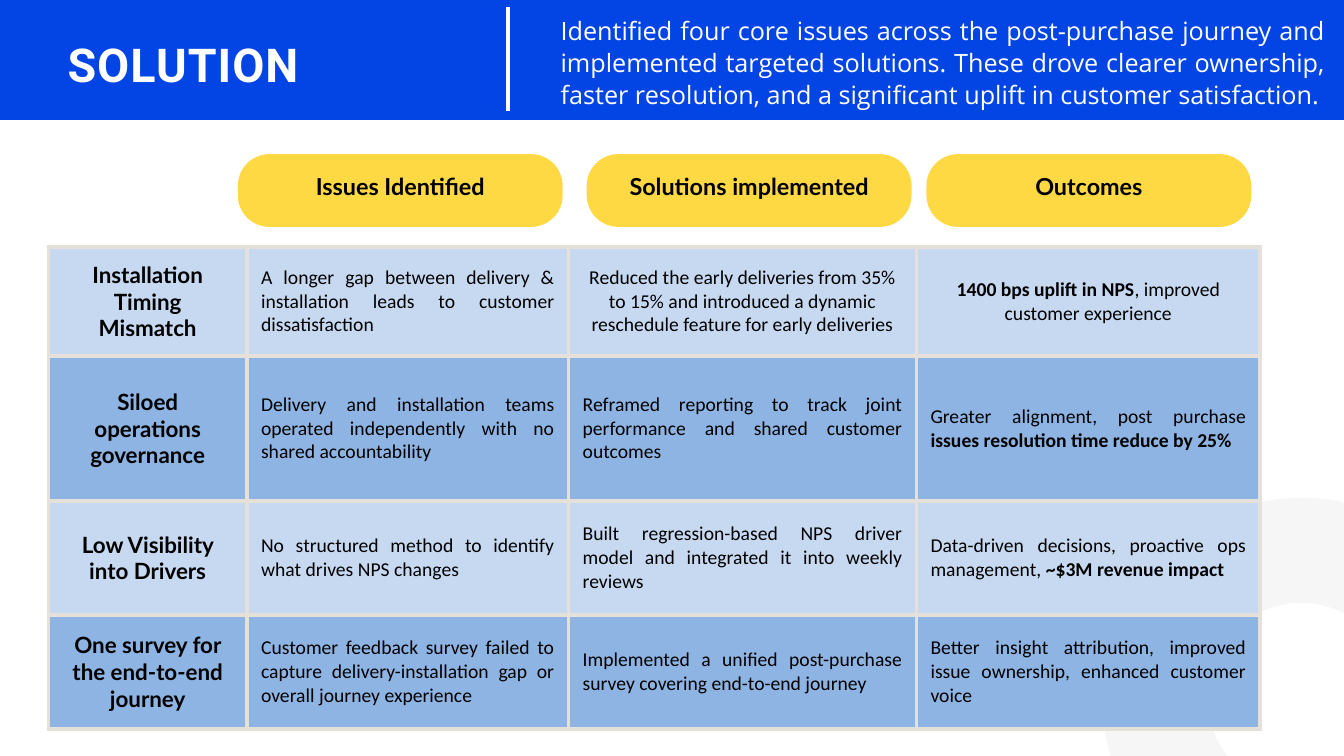
from lxml.etree import SubElement
from pptx import Presentation
from pptx.dml.color import RGBColor
from pptx.enum.shapes import MSO_CONNECTOR, MSO_SHAPE
from pptx.enum.text import MSO_ANCHOR, PP_ALIGN
from pptx.oxml import parse_xml
from pptx.oxml.ns import nsdecls, qn
from pptx.util import Inches, Pt

WHITE = RGBColor(0xFF, 0xFF, 0xFF)
BLACK = RGBColor(0x00, 0x00, 0x00)
BLUE = RGBColor(0x03, 0x45, 0xE4)
YELLOW = RGBColor(0xFF, 0xD9, 0x44)
RING_GREY = RGBColor(0xF6, 0xF6, 0xF6)
BORDER_GREY = RGBColor(0xE5, 0xE1, 0xDA)
ROW_FILLS = [RGBColor(0xC6, 0xD9, 0xF1), RGBColor(0x8E, 0xB4, 0xE3)]

CENTER, JUSTIFY = PP_ALIGN.CENTER, PP_ALIGN.JUSTIFY

SUMMARY = (
    "Identified four core issues across the post-purchase journey and "
    "implemented targeted solutions. These drove clearer ownership, faster "
    "resolution, and a significant uplift in customer satisfaction."
)
HEADINGS = [(2.38, "Issues Identified"), (5.84, "Solutions implemented"), (9.21, "Outcomes")]
COLUMN_WIDTHS = [1.97, 3.19, 3.45, 3.41]
ROW_HEIGHTS = [1.08, 1.44, 1.13, 1.13]

# Each row: heading, issue, solution, outcome as (text, bold) runs
ROWS = [
    ("Installation Timing Mismatch",
     "A longer gap between delivery & installation leads to customer dissatisfaction",
     "Reduced the early deliveries from 35% to 15% and introduced a dynamic "
     "reschedule feature for early deliveries",
     [("1400 bps uplift in NPS", True), (", improved customer experience", False)]),
    ("Siloed operations governance",
     "Delivery and installation teams operated independently with no shared accountability",
     "Reframed reporting to track joint performance and shared customer outcomes",
     [("Greater alignment, post purchase ", False),
      ("issues resolution time reduce by 25%", True)]),
    ("Low Visibility into Drivers",
     "No structured method to identify what drives NPS changes",
     "Built regression-based NPS driver model and integrated it into weekly reviews",
     [("Data-driven decisions, proactive ops management, ", False),
      ("~$3M revenue impact", True)]),
    ("One survey for the end-to-end journey",
     "Customer feedback survey failed to capture delivery-installation gap or "
     "overall journey experience",
     "Implemented a unified post-purchase survey covering end-to-end journey",
     [("Better insight attribution, improved issue ownership, enhanced customer voice", False)]),
]


def set_margins(target, left, top, right, bottom):
    target.margin_left, target.margin_top = Inches(left), Inches(top)
    target.margin_right, target.margin_bottom = Inches(right), Inches(bottom)


def write(text_frame, runs, font_name, size, color, alignment=None, line_spacing=None):
    """Fill the first paragraph with (text, bold) runs; line_spacing is in points."""
    text_frame.word_wrap = True
    paragraph = text_frame.paragraphs[0]
    paragraph.alignment = alignment
    if line_spacing:
        paragraph.line_spacing = Pt(line_spacing)
    for text, bold in runs:
        run = paragraph.add_run()
        run.text = text
        run.font.name = font_name
        run.font.size = Pt(size)
        run.font.bold = bold
        run.font.color.rgb = color
    return paragraph


def add_plain_shape(slide, kind, left, top, width, height, fill=None, line=None, line_width=0):
    shape = slide.shapes.add_shape(
        kind, Inches(left), Inches(top), Inches(width), Inches(height))
    shape.shadow.inherit = False
    if fill is None:
        shape.fill.background()
    else:
        shape.fill.solid()
        shape.fill.fore_color.rgb = fill
    if line is None:
        shape.line.fill.background()
    else:
        shape.line.color.rgb = line
        shape.line.width = Pt(line_width)
    return shape


def add_text(slide, left, top, width, height, runs, *style):
    box = slide.shapes.add_textbox(Inches(left), Inches(top), Inches(width), Inches(height))
    set_margins(box.text_frame, 0, 0, 0, 0)
    return write(box.text_frame, runs, *style)


def add_divider(slide, x, top, bottom):
    divider = slide.shapes.add_connector(
        MSO_CONNECTOR.STRAIGHT, Inches(x), Inches(top), Inches(x), Inches(bottom))
    divider.line.color.rgb = WHITE
    divider.line.width = Pt(3)
    SubElement(divider._element.spPr, qn("a:effectLst"))


def add_heading_pill(slide, left, text):
    pill = add_plain_shape(
        slide, MSO_SHAPE.ROUNDED_RECTANGLE, left, 1.55, 3.18, 0.68, YELLOW, YELLOW, 3)
    pill.adjustments[0] = 0.43
    # The deeper bottom margin lifts the label slightly above the middle
    set_margins(pill.text_frame, 0.04, 0.04, 0.04, 0.17)
    pill.text_frame.vertical_anchor = MSO_ANCHOR.MIDDLE
    write(pill.text_frame, [(text, True)], "Lato", 16.7, BLACK, CENTER, 23.3)


def set_borders(cell):
    properties = cell._tc.get_or_add_tcPr()
    for side in ("lnL", "lnR", "lnT", "lnB"):
        properties.append(parse_xml(
            f'<a:{side} {nsdecls("a")} w="{Pt(3)}"><a:solidFill>'
            f'<a:srgbClr val="{BORDER_GREY}"/></a:solidFill></a:{side}>'))


def fill_cell(cell, runs, fill, font_name, size, alignment):
    set_borders(cell)
    cell.fill.solid()
    cell.fill.fore_color.rgb = fill
    cell.vertical_anchor = MSO_ANCHOR.MIDDLE
    set_margins(cell, 0.14, 0.14, 0.14, 0.14)
    write(cell.text_frame, runs, font_name, size, BLACK, alignment)


def add_solution_table(slide):
    table = slide.shapes.add_table(
        len(ROWS), len(COLUMN_WIDTHS), Inches(0.48), Inches(2.45),
        Inches(sum(COLUMN_WIDTHS)), Inches(sum(ROW_HEIGHTS))).table
    table.first_row = False
    table.horz_banding = False
    for column, width in zip(table.columns, COLUMN_WIDTHS):
        column.width = Inches(width)
    for index, (heading, issue, solution, outcome) in enumerate(ROWS):
        table.rows[index].height = Inches(ROW_HEIGHTS[index])
        fill = ROW_FILLS[index % 2]
        later_alignment = CENTER if index == 0 else JUSTIFY
        fill_cell(table.cell(index, 0), [(heading, True)], fill, "Lato", 16, CENTER)
        fill_cell(table.cell(index, 1), [(issue, False)], fill, "Calibri", 14, JUSTIFY)
        fill_cell(table.cell(index, 2), [(solution, False)], fill, "Calibri", 14, later_alignment)
        fill_cell(table.cell(index, 3), outcome, fill, "Calibri", 14, later_alignment)


def main():
    presentation = Presentation()
    presentation.slide_width = Inches(13.33)
    presentation.slide_height = Inches(7.5)
    slide = presentation.slides.add_slide(presentation.slide_layouts[6])

    add_plain_shape(slide, MSO_SHAPE.OVAL, 11.45, 5.46, 2.91, 2.91, None, RING_GREY, 75)
    add_plain_shape(slide, MSO_SHAPE.RECTANGLE, 0, 0, 13.33, 1.19, BLUE)
    title = add_text(slide, 0.67, 0.26, 4.19, 0.6, [("SOLUTION", True)],
                     "Roboto", 33.3, WHITE, PP_ALIGN.LEFT, 46.7)
    title.runs[0].font._element.set("spc", "70")
    add_divider(slide, 5.04, 0.07, 1.1)
    add_text(slide, 5.56, 0.14, 7.58, 0.95, [(SUMMARY, False)],
             "Open Sans", 18, WHITE, JUSTIFY, 22.7)
    for left, text in HEADINGS:
        add_heading_pill(slide, left, text)
    add_solution_table(slide)

    presentation.save("out.pptx")


if __name__ == "__main__":
    main()
